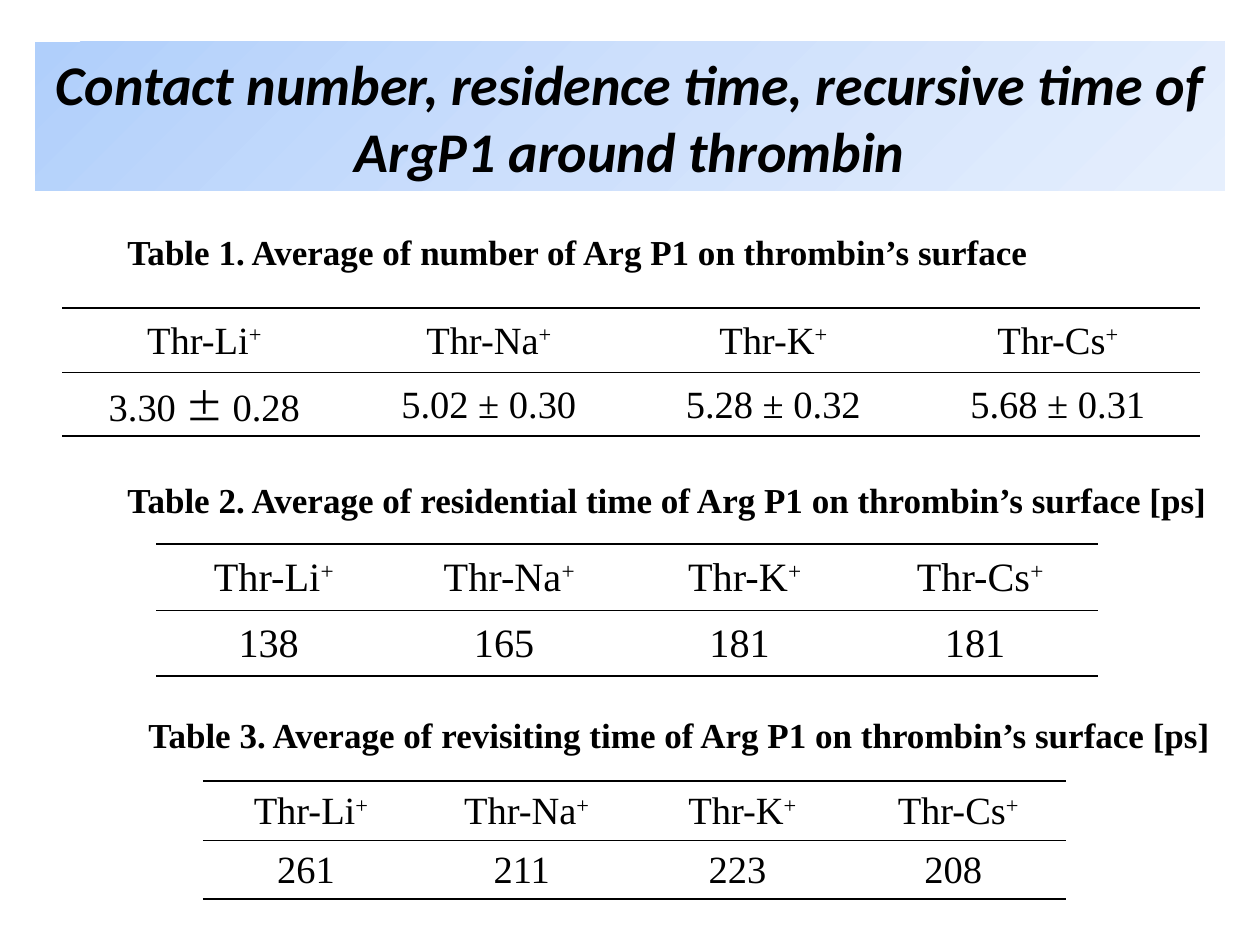
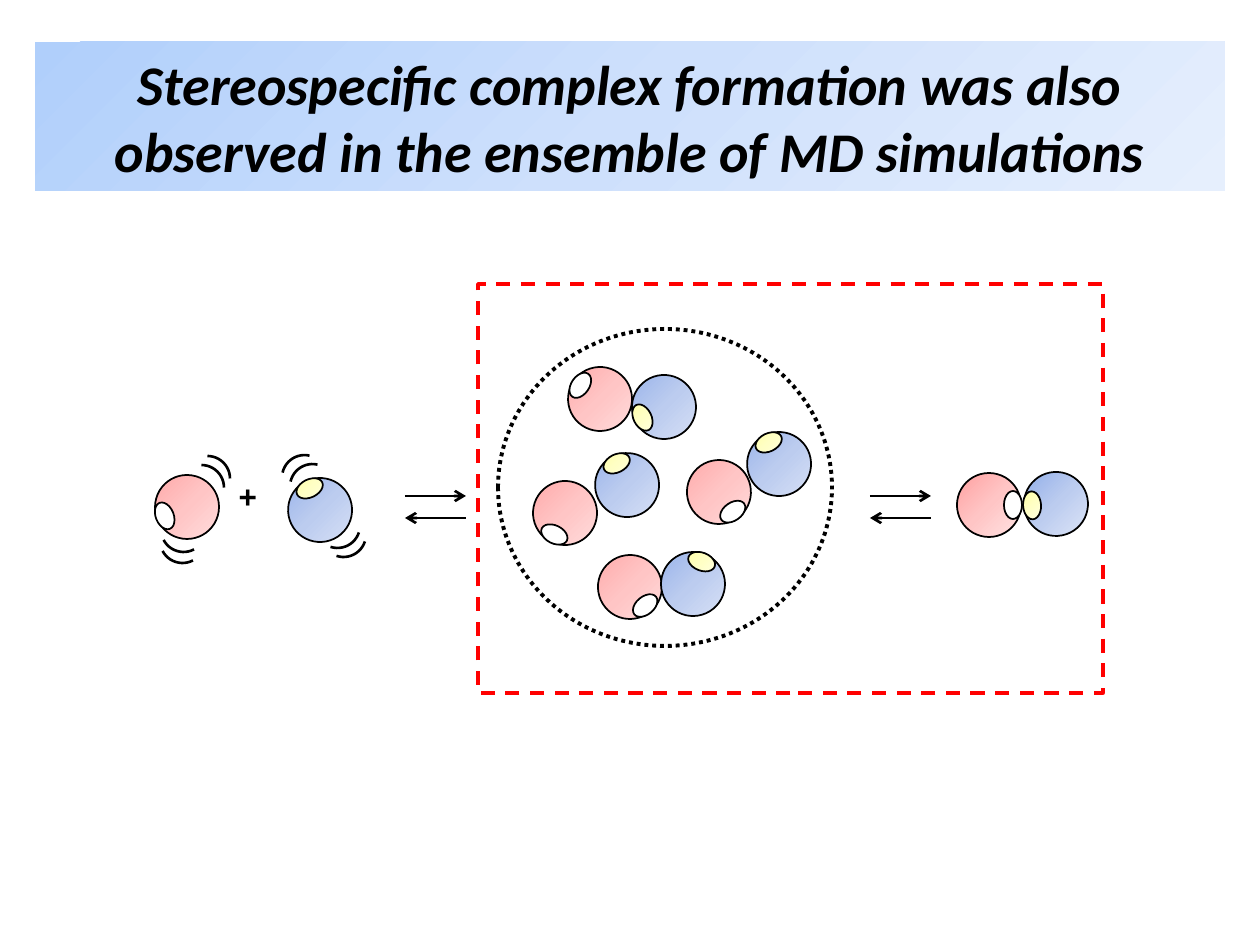
import math

from pptx import Presentation, util as u
from pptx.dml.color import RGBColor
from pptx.enum import dml, shapes, text
from pptx.oxml import parse_xml
from pptx.oxml.ns import nsdecls, qn

EMU_PER_PX = 914400 / 126

# Shared palette and fonts
BLACK, WHITE, RED = "000000", "FFFFFF", "FF0000"
BAND_BLUE = ("B0CFFB", "CEE0FC", "E6EFFD")
BALL_RED = ("FFA0A0", "FFC5C5", "FFE3E3")
BALL_BLUE = ("8FADE9", "BCCCEF", "DEE6F7")
SITE_YELLOW = ("FFFFA0", "FFFFC5", "FFFFE3")
TITLE_FONT, BODY_FONT, SIGN_FONT = "Calibri", "Times New Roman", "Noto Sans CJK JP"
PLAIN_STYLE = "{2D5ABB26-0587-4C30-8999-92F81FD0307C}"

IONS = ("Li", "Na", "K", "Cs")
OVAL = shapes.MSO_SHAPE.OVAL


def px(*lengths):
    return [u.Emu(round(length * EMU_PER_PX)) for length in lengths]


def rgb(hex_colour):
    return RGBColor.from_string(hex_colour)


def style_font(font, name, size, bold=False, italic=False):
    font.name, font.size = name, u.Pt(size)
    font.bold, font.italic = bold, italic
    font.color.rgb = rgb(BLACK)


def fill_gradient(shape, colours):
    """Diagonal gradient that stays upright when the shape is turned."""
    shape.fill.gradient()
    default = shape._element.spPr.find(qn("a:gradFill"))
    stops = "".join(f'<a:gs pos="{i * 50000}"><a:srgbClr val="{c}"/></a:gs>'
                    for i, c in enumerate(colours))
    default.getparent().replace(default, parse_xml(
        f'<a:gradFill {nsdecls("a")} rotWithShape="0"><a:gsLst>{stops}</a:gsLst>'
        '<a:lin ang="2700000" scaled="0"/></a:gradFill>'))


def add_figure(slide, kind, box, fill=None, line=BLACK, width=1.0, dash=None, turn=0):
    figure = slide.shapes.add_shape(kind, *px(*box))
    figure.shadow.inherit = False
    figure.rotation = turn
    if fill is None:
        figure.fill.background()
    elif isinstance(fill, tuple):
        fill_gradient(figure, fill)
    else:
        figure.fill.solid()
        figure.fill.fore_color.rgb = rgb(fill)
    if line is None:
        figure.line.fill.background()
    else:
        figure.line.color.rgb = rgb(line)
        figure.line.width = u.Pt(width)
    if dash is not None:
        figure.line.dash_style = dash
    return figure


def add_title(slide, wording):
    band = add_figure(slide, shapes.MSO_SHAPE.RECTANGLE, (35, 42, 1190, 149),
                      BAND_BLUE, line=None)
    frame = band.text_frame
    frame.word_wrap = True
    frame.auto_size = text.MSO_AUTO_SIZE.SHAPE_TO_FIT_TEXT
    frame.text = wording
    frame.paragraphs[0].alignment = text.PP_ALIGN.CENTER
    style_font(frame.paragraphs[0].font, TITLE_FONT, 32, bold=True, italic=True)


def add_label(slide, box, wording, font, size):
    frame = slide.shapes.add_textbox(*px(*box)).text_frame
    frame.word_wrap = False
    frame.auto_size = text.MSO_AUTO_SIZE.SHAPE_TO_FIT_TEXT
    frame.text = wording
    style_font(frame.paragraphs[0].font, font, size, bold=True)


# Tables
def add_border(cell, side, points):
    cell._tc.get_or_add_tcPr().append(parse_xml(
        f'<a:{side} {nsdecls("a")} w="{u.Pt(points)}"><a:solidFill>'
        f'<a:srgbClr val="{BLACK}"/></a:solidFill></a:{side}>'))


def write_cell(cell, pieces, size):
    """Write runs; a piece may be a superscript sign or a ± in its own font."""
    paragraph = cell.text_frame.paragraphs[0]
    paragraph.alignment = text.PP_ALIGN.CENTER
    for piece in pieces:
        run = paragraph.add_run()
        run.text = piece
        style_font(run.font, SIGN_FONT if piece == "± " else BODY_FONT, size)
        if piece == "+":
            run._r.get_or_add_rPr().set("baseline", "30000")


def add_ion_table(slide, box, row_heights, values, size):
    """Ruled table: blank caption row, ions, values."""
    left, top, width = box
    rows = [[()] * len(IONS), [(f"Thr-{ion}", "+") for ion in IONS], values]
    rules = [(None, 1), (1, 0.5), (0.5, 1)]
    table = slide.shapes.add_table(
        len(rows), len(IONS), *px(left, top, width, sum(row_heights))).table
    table.first_row = table.horz_banding = False
    table._tbl.tblPr.find(qn("a:tableStyleId")).text = PLAIN_STYLE
    for column in table.columns:
        column.width = px(width / len(IONS))[0]
    for r, (row, height, (above, below)) in enumerate(zip(rows, row_heights, rules)):
        table.rows[r].height = px(height)[0]
        for c, pieces in enumerate(row):
            cell = table.cell(r, c)
            cell.margin_left = cell.margin_right = cell.margin_top = u.Inches(0.02)
            cell.margin_bottom = 0
            cell.vertical_anchor = text.MSO_ANCHOR.MIDDLE
            if above:
                add_border(cell, "lnT", above)
            add_border(cell, "lnB", below)
            cell.fill.background()
            write_cell(cell, pieces, size)


# Molecules
def add_molecule(slide, centre, turn, ball_fill, site_fill):
    """Ball with a binding site near its rim, on the side given by the turn."""
    x, y = centre
    add_figure(slide, OVAL, (x - 32, y - 32, 64, 64), ball_fill, turn=turn)
    site_x = x - 24 * math.sin(math.radians(turn))
    site_y = y + 24 * math.cos(math.radians(turn))
    add_figure(slide, OVAL, (site_x - 14, site_y - 9, 28, 18), site_fill, turn=turn)


def add_pair(slide, red_centre, red_turn, blue_centre, blue_turn):
    add_molecule(slide, red_centre, red_turn, BALL_RED, WHITE)
    add_molecule(slide, blue_centre, blue_turn, BALL_BLUE, SITE_YELLOW)


def add_motion_marks(slide, turn, *corners):
    for left, top in corners:
        add_figure(slide, shapes.MSO_SHAPE.ARC, (left, top, 45, 45),
                   width=1.5, turn=turn)


def add_arrow(slide, start_x, end_x, y):
    arrow = slide.shapes.add_connector(
        shapes.MSO_CONNECTOR.STRAIGHT, *px(start_x, y, end_x, y))
    arrow.line.color.rgb = rgb(BLACK)
    arrow.line.width = u.Pt(1.5)
    arrow.line._get_or_add_ln().append(
        parse_xml(f'<a:tailEnd {nsdecls("a")} type="arrow"/>'))
    arrow._element.spPr.append(parse_xml(f'<a:effectLst {nsdecls("a")}/>'))


def add_equilibrium(slide, left):
    add_arrow(slide, left, left + 61, 496)
    add_arrow(slide, left + 61, left, 518)


def build_contact_slide(slide):
    add_title(slide, "Contact number, residence time, recursive time of "
                     "ArgP1 around thrombin")
    add_ion_table(slide, (156, 492, 942), (52, 66, 66),
                  [("138 ",), ("165 ",), ("181 ",), ("181 ",)], 23)
    add_ion_table(slide, (62, 257, 1138), (51, 64, 64),
                  [("3.30 ", "± ", "0.28"), ("5.02 ± 0.30",),
                   ("5.28 ± 0.32",), ("5.68 ± 0.31",)], 22)
    add_ion_table(slide, (203, 732, 863), (49, 59, 59),
                  [("261 ",), ("211 ",), ("223 ",), ("208 ",)], 22)
    captions = [
        ((115, 224, 932, 55), "Table 1. Average of number of Arg P1 on thrombin’s surface"),
        ((115, 472, 1113, 55),
         "Table 2. Average of residential time of Arg P1 on thrombin’s surface [ps]"),
        ((136, 707, 1095, 55),
         "Table 3. Average of revisiting time of Arg P1 on thrombin’s surface [ps]"),
    ]
    for box, caption in captions:
        add_label(slide, box, caption, BODY_FONT, 20)


def build_complex_slide(slide):
    # Free molecules in motion
    add_pair(slide, (187, 507), 68.2, (320, 510), 154.3)
    add_motion_marks(slide, 0, (179, 465), (185, 456))
    add_motion_marks(slide, 152.3, (161, 507), (160, 518))
    add_motion_marks(slide, 282.8, (290, 464), (282, 455))
    add_motion_marks(slide, 108, (315, 503), (321, 512))
    add_label(slide, (226, 471, 68, 78), "+", "Courier New", 18)

    # Encounter complexes, then the stereospecific complex
    add_pair(slide, (600, 399), 124.6, (664, 407), 63.8)
    add_pair(slide, (565, 513), 26.2, (627, 485), 154.3)
    add_pair(slide, (719, 492), 324.9, (779, 464), 154.3)
    add_pair(slide, (630, 587), 320.6, (693, 584), 201)
    add_pair(slide, (989, 505), 270, (1056, 504), 86.6)

    # Equilibria and frames
    for left in (405, 870):
        add_equilibrium(slide, left)
    add_figure(slide, OVAL, (498, 329, 334, 317), width=2.25,
               dash=dml.MSO_LINE.ROUND_DOT)
    add_figure(slide, shapes.MSO_SHAPE.RECTANGLE, (478, 284, 625, 409), line=RED,
               width=2, dash=dml.MSO_LINE.DASH)
    add_title(slide, "Stereospecific complex formation was also observed "
                     "in the ensemble of MD simulations")


def main():
    deck = Presentation()
    deck.slide_width, deck.slide_height = px(1260, 945)
    blank = deck.slide_layouts[6]
    for build in (build_contact_slide, build_complex_slide):
        build(deck.slides.add_slide(blank))
    deck.save("out.pptx")


if __name__ == "__main__":
    main()
